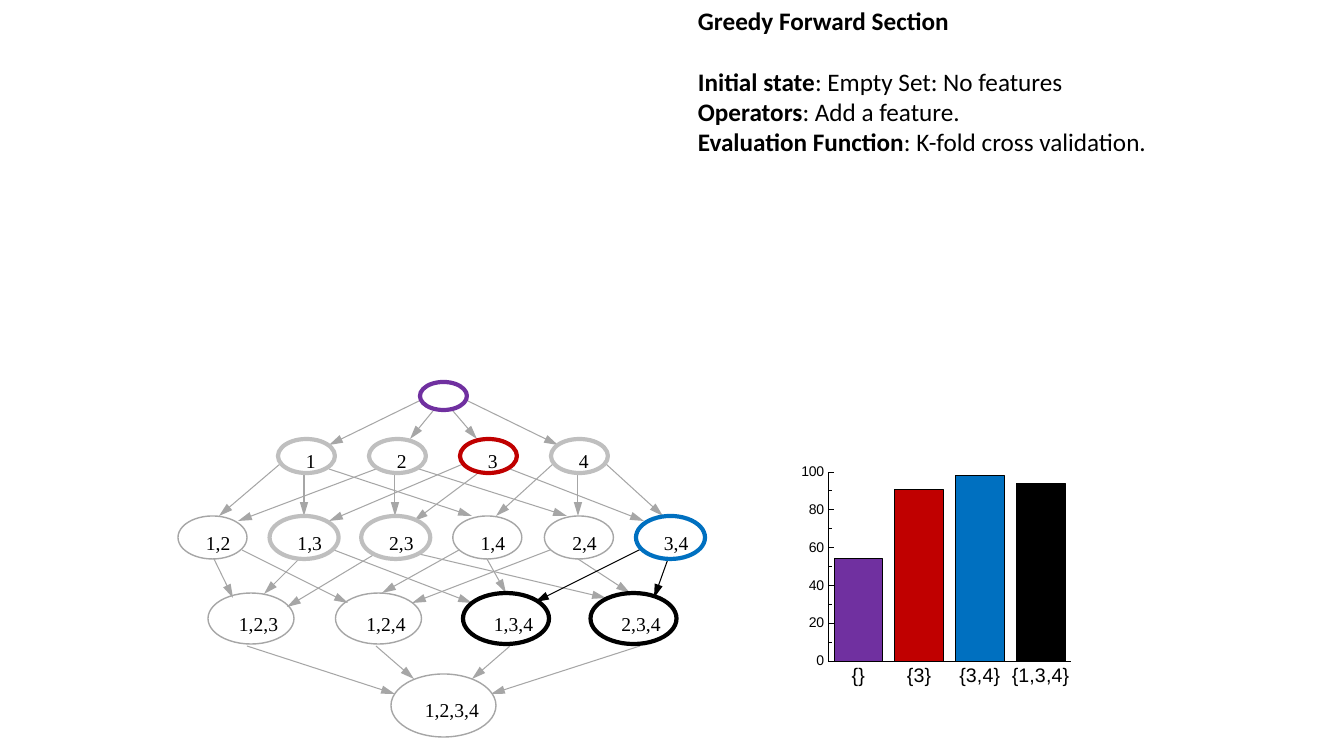
from lxml import etree
from pptx import Presentation, util as u
from pptx.chart import data as cd
from pptx.dml.color import RGBColor
from pptx.enum import chart as ch, shapes, text as tx
from pptx.oxml import ns, parse_xml

PX = 914400 / 100.8
BLACK = RGBColor(0x00, 0x00, 0x00)
GREY = RGBColor(0xA6, 0xA6, 0xA6)
SILVER = RGBColor(0xBF, 0xBF, 0xBF)
PURPLE = RGBColor(0x70, 0x30, 0xA0)
RED = RGBColor(0xC0, 0x00, 0x00)
BLUE = RGBColor(0x00, 0x70, 0xC0)

ROWS = [
    (242, 0, 0, 47, 28, 0, 0, 0, [("", PURPLE)]),
    (100, 57, 91, 57, 34, 18, 5, 34,
     [("1", SILVER), ("2", SILVER), ("3", RED), ("4", SILVER)]),
    (0, 134, 91.6, 69, 43, 18, 10, 52,
     [("1,2", GREY), ("1,3", SILVER), ("2,3", SILVER),
      ("1,4", GREY), ("2,4", GREY), ("3,4", BLUE)]),
    (30, 211, 127.5, 86, 51, 21, 14, 68,
     [("1,2,3", GREY), ("1,2,4", GREY), ("1,3,4", BLACK), ("2,3,4", BLACK)]),
    (213, 292, 0, 105, 63, 24, 19, 84, [("1,2,3,4", GREY)]),
]

EDGES = [
    (241, 19, 151, 63), (255, 29, 232, 57), (275, 29, 299, 57), (290, 19, 380, 63),
    (102, 82, 41, 134), (126, 92, 126, 134), (151, 87, 294, 134),
    (198, 87, 60, 139), (217, 92, 217, 134), (241, 87, 389, 134),
    (285, 82, 151, 139), (299, 92, 236, 139), (332, 87, 466, 139),
    (375, 82, 318, 134), (400, 92, 400, 134), (428, 82, 485, 134),
    (36, 177, 55, 216), (64, 168, 170, 221), (120, 178, 86, 212),
    (156, 168, 294, 221), (197, 172, 109, 225), (241, 172, 428, 216),
    (281, 168, 204, 211), (309, 177, 328, 211),
    (372, 168, 234, 221), (400, 177, 452, 211),
    (69, 264, 217, 312), (198, 264, 236, 297),
    (332, 264, 294, 297), (462, 264, 313, 312),
]
PICKS = [(463, 167, 357, 220), (490, 177, 476, 216)]

FACTS = [
    ("Greedy Forward Section", ""),
    ("Initial state", ": Empty Set: No features"),
    ("Operators", ": Add a feature."),
    ("Evaluation Function", ": K-fold cross validation."),
]
BARS = [("{}", 54, PURPLE), ("{3}", 91, RED), ("{3,4}", 98, BLUE), ("{1,3,4}", 94, BLACK)]


def px(*nums):
    return [u.Emu(round(n * PX)) for n in nums]


def write(para, words, font="Calibri", size=18, bold=False, color=BLACK):
    run = para.add_run()
    run.text = words
    run.font.name = font
    run.font.size = u.Pt(size)
    run.font.bold = bold
    run.font.color.rgb = color


def frame(slide, box, wrap):
    area = slide.shapes.add_textbox(*px(*box)).text_frame
    area.word_wrap = wrap
    area.auto_size = tx.MSO_AUTO_SIZE.SHAPE_TO_FIT_TEXT
    return area


def header(slide, box):
    area = frame(slide, box, True)
    for i, (lead, rest) in enumerate(FACTS):
        para = area.add_paragraph() if i else area.paragraphs[0]
        write(para, lead, bold=True)
        if rest:
            write(para, rest)
    area.paragraphs[0].space_after = u.Pt(22)


def arrow(slide, ends, color):
    link = slide.shapes.add_connector(shapes.MSO_CONNECTOR.STRAIGHT, *px(*ends))
    link.line.color.rgb = color
    link.line.width = u.Pt(0.75)
    tip = etree.SubElement(link.line._get_or_add_ln(), ns.qn("a:tailEnd"))
    tip.set("type", "triangle")
    tip.set("w", "med")
    tip.set("len", "lg")
    etree.SubElement(link._element.spPr, ns.qn("a:effectLst"))


def node(slide, box, color):
    oval = slide.shapes.add_shape(shapes.MSO_SHAPE.OVAL, *px(*box))
    oval.shadow.inherit = False
    oval.fill.background()
    oval.line.color.rgb = color
    oval.line.width = u.Pt(1 if color == GREY else 3)


def lattice(slide, box):
    left, top = box
    for group, color in ((EDGES, GREY), (PICKS, BLACK)):
        for x1, y1, x2, y2 in group:
            arrow(slide, (left + x1, top + y1, left + x2, top + y2), color)
    for x, y, step, wide, high, dx, dy, span, items in ROWS:
        for i, (label, color) in enumerate(items):
            at = left + x + i * step
            node(slide, (at, top + y, wide, high), color)
            if label:
                area = frame(slide, (at + dx, top + y + dy, span, 34), False)
                write(area.paragraphs[0], label, font="Times New Roman", size=14)


def style(axis, size, tick):
    axis.has_major_gridlines = False
    axis.format.line.color.rgb = BLACK
    axis.format.line.width = u.Pt(0.5)
    axis.major_tick_mark = axis.minor_tick_mark = tick
    font = axis.tick_labels.font
    font.name, font.size = "Arial", u.Pt(size)
    font.color.rgb = BLACK


def scores(slide, box, plot):
    data = cd.CategoryChartData()
    data.categories = [name for name, _, _ in BARS]
    data.add_series("Score", [value for _, value, _ in BARS])
    chart = slide.shapes.add_chart(
        ch.XL_CHART_TYPE.COLUMN_CLUSTERED, *px(*box), data).chart
    chart.has_legend = chart.has_title = False
    chart.font.name = "Arial"
    bars = chart.plots[0]
    bars.vary_by_categories = False
    bars.gap_width = 25
    for i, (_, _, color) in enumerate(BARS):
        look = bars.series[0].points[i].format
        look.fill.solid()
        look.fill.fore_color.rgb = color
        look.line.color.rgb = BLACK
        look.line.width = u.Pt(0.5)
    style(chart.category_axis, 14, ch.XL_TICK_MARK.NONE)
    axis = chart.value_axis
    style(axis, 10, ch.XL_TICK_MARK.INSIDE)
    axis.minimum_scale, axis.maximum_scale = 0, 100
    axis.major_unit, axis.minor_unit = 20, 10
    left, top, wide, high = box
    parts = zip("xywh", plot, (wide, high, wide, high))
    sizes = "".join(f'<c:{k} val="{n / full:.4f}"/>' for k, n, full in parts)
    layout = parse_xml(
        f'<c:layout {ns.nsdecls("c")}><c:manualLayout><c:layoutTarget val="inner"/>'
        f'<c:xMode val="edge"/><c:yMode val="edge"/>{sizes}</c:manualLayout></c:layout>')
    area = chart._chartSpace.chart.plotArea
    for old in area.findall(ns.qn("c:layout")):
        area.remove(old)
    area.insert(0, layout)


def main():
    deck = Presentation()
    deck.slide_width, deck.slide_height = px(1344, 756)
    slide = deck.slides.add_slide(deck.slide_layouts[6])
    lattice(slide, (178, 382))
    header(slide, (688, 0, 504, 224))
    scores(slide, (780, 460, 306, 240), (48, 12, 243, 189))
    deck.save("out.pptx")


if __name__ == "__main__":
    main()
